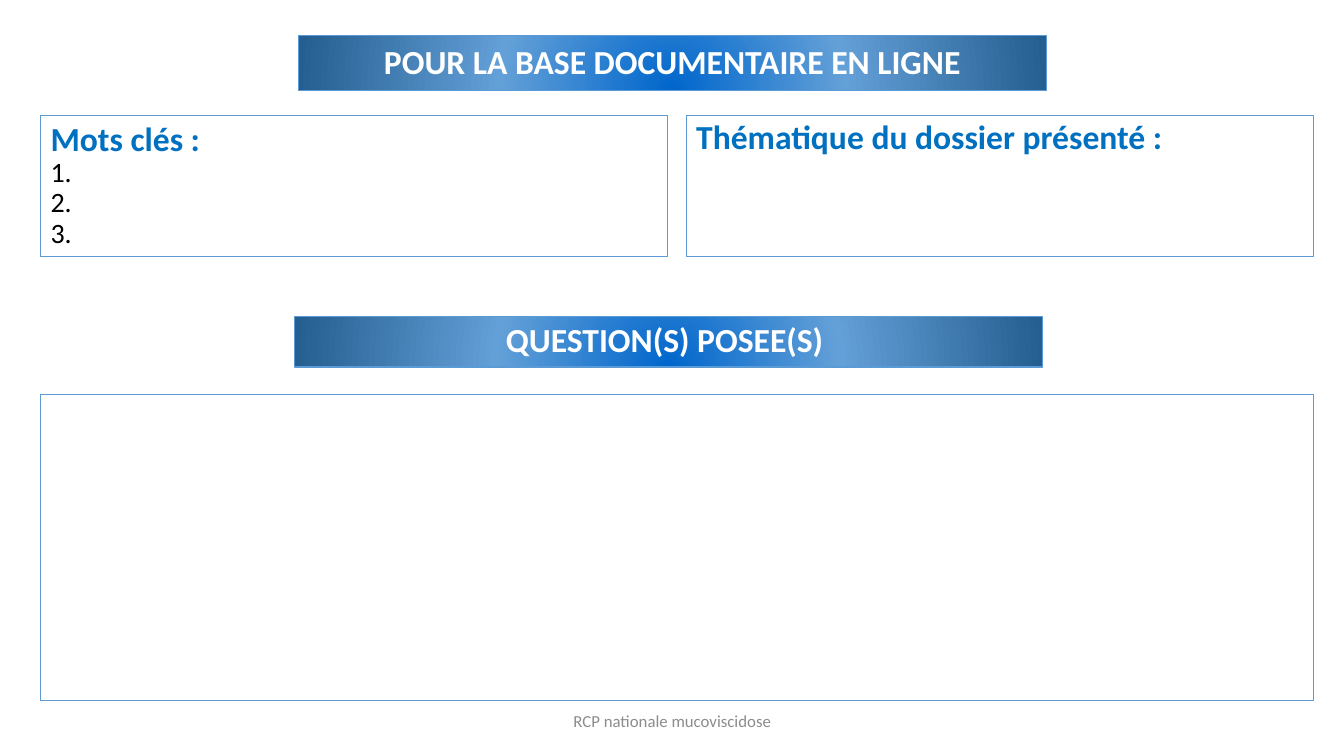
import pptx
import pptx.dml.color
import pptx.enum.shapes
import pptx.enum.text
import pptx.oxml
import pptx.oxml.ns
import pptx.util

Cm = pptx.util.Cm
Pt = pptx.util.Pt
RGBColor = pptx.dml.color.RGBColor
ANCHOR = pptx.enum.text.MSO_ANCHOR
ALIGN = pptx.enum.text.PP_ALIGN
RECTANGLE = pptx.enum.shapes.MSO_SHAPE.RECTANGLE

WHITE = RGBColor(0xFF, 0xFF, 0xFF)
BLACK = RGBColor(0x00, 0x00, 0x00)
HEADING_BLUE = RGBColor(0x00, 0x70, 0xC0)
BORDER_BLUE = RGBColor(0x5B, 0x9B, 0xD5)
FOOTER_GRAY = RGBColor(0x8C, 0x8C, 0x8C)
BANNER_STOPS = (
    (0, RGBColor(0x00, 0x66, 0xCC)),
    (46, RGBColor(0x63, 0xA0, 0xD7)),
    (100, RGBColor(0x25, 0x5E, 0x91)),
)

BANNER_TEXT = {"size": Pt(24), "bold": True, "color": WHITE}
HEADING_TEXT = {"size": Pt(24), "bold": True, "color": HEADING_BLUE}
LIST_TEXT = {"size": Pt(20), "bold": False, "color": BLACK}
FOOTER_TEXT = {"size": Pt(12), "bold": False, "color": FOOTER_GRAY}

LEFT, WIDTH = 1.02, 32.08
CARD_TOP, CARD_WIDTH, CARD_HEIGHT = 2.9, 15.81, 3.56
BANNER_WIDTH = 18.85


class FormSlide:
    """Hold the style of the form and draw its elements on the current slide."""

    font_name = "Calibri"

    def __init__(self, presentation):
        self.slide = presentation.slides.add_slide(presentation.slide_layouts[3])
        self.title, self.keywords, self.topic = list(self.slide.placeholders)[:3]
        for placeholder in list(self.slide.placeholders)[3:]:
            placeholder.element.getparent().remove(placeholder.element)

    def place(self, shape, left, top, width, height):
        box = {"left": left, "top": top, "width": width, "height": height}
        for name, value in box.items():
            setattr(shape, name, Cm(value))

    def rectangle(self):
        shape = self.slide.shapes.add_shape(RECTANGLE, 0, 0, 0, 0)
        shape.shadow.inherit = False
        return shape

    def border(self, shape):
        shape.line.color.rgb = BORDER_BLUE
        shape.line.width = Pt(0.75)

    def fill_text(self, shape, paragraphs, anchor, alignment, line_spacing=0.9):
        frame = shape.text_frame
        frame_format = {
            "word_wrap": True,
            "auto_size": pptx.enum.text.MSO_AUTO_SIZE.NONE,
            "vertical_anchor": anchor,
        }
        for name, value in frame_format.items():
            setattr(frame, name, value)
        paragraph_format = {
            "alignment": alignment,
            "line_spacing": line_spacing,
            "space_before": Pt(0),
        }
        for index, lines in enumerate(paragraphs):
            paragraph = frame.add_paragraph() if index else frame.paragraphs[0]
            for name, value in paragraph_format.items():
                setattr(paragraph, name, value)
            properties = paragraph._p.get_or_add_pPr()
            properties.set("marL", "0")
            properties.set("indent", "0")
            namespace = pptx.oxml.ns.nsdecls("a")
            properties.append(pptx.oxml.parse_xml(f"<a:buNone {namespace}/>"))
            for line, (text, style) in enumerate(lines):
                if line:
                    paragraph.add_line_break()
                run = paragraph.add_run()
                run.text = text
                font_format = {"name": self.font_name, **style}
                run.font.color.rgb = font_format.pop("color")
                for name, value in font_format.items():
                    setattr(run.font, name, value)

    def banner(self, shape, text, left, top, height):
        self.place(shape, left, top, BANNER_WIDTH, height)
        self.border(shape)
        shape.fill.gradient()
        gradient = shape.element.spPr.find(pptx.oxml.ns.qn("a:gradFill"))
        stops = "".join(
            f'<a:gs pos="{position * 1000}"><a:srgbClr val="{color}"/></a:gs>'
            for position, color in BANNER_STOPS
        )
        radial = pptx.oxml.parse_xml(
            f'<a:gradFill {pptx.oxml.ns.nsdecls("a")} rotWithShape="1">'
            f'<a:gsLst>{stops}</a:gsLst><a:path path="circle">'
            '<a:fillToRect l="50000" t="130000" r="50000" b="-30000"/>'
            "</a:path></a:gradFill>"
        )
        gradient.getparent().replace(gradient, radial)
        self.fill_text(shape, [[(text, BANNER_TEXT)]], ANCHOR.MIDDLE, ALIGN.CENTER)

    def card(self, shape, left, paragraphs, anchor):
        self.place(shape, left, CARD_TOP, CARD_WIDTH, CARD_HEIGHT)
        self.border(shape)
        self.fill_text(shape, paragraphs, anchor, ALIGN.LEFT)

    def answer_area(self, top, height):
        shape = self.rectangle()
        self.place(shape, LEFT, top, WIDTH, height)
        shape.fill.background()
        self.border(shape)

    def footer(self, text):
        shape = self.slide.shapes.add_textbox(0, 0, 0, 0)
        self.place(shape, 11.23, 17.65, 11.43, 1.02)
        self.fill_text(shape, [[(text, FOOTER_TEXT)]], ANCHOR.MIDDLE, ALIGN.CENTER, 1.0)


def main():
    presentation = pptx.Presentation()
    presentation.slide_width = Cm(33.87)
    presentation.slide_height = Cm(19.05)

    form = FormSlide(presentation)
    form.banner(form.title, "POUR LA BASE DOCUMENTAIRE EN LIGNE", 7.52, 0.89, 1.4)
    keywords = [
        [("Mots clés :", HEADING_TEXT), ("1.", LIST_TEXT)],
        [("2.", LIST_TEXT)],
        [("3.", LIST_TEXT)],
    ]
    form.card(form.keywords, LEFT, keywords, ANCHOR.MIDDLE)
    topic = [[("Thématique du dossier présenté :", HEADING_TEXT)]]
    form.card(form.topic, LEFT + WIDTH - CARD_WIDTH, topic, ANCHOR.TOP)
    form.banner(form.rectangle(), "QUESTION(S) POSEE(S) ", 7.42, 7.98, 1.27)
    form.answer_area(9.93, 7.72)
    form.footer("RCP nationale mucoviscidose")

    presentation.save("out.pptx")


if __name__ == "__main__":
    main()
